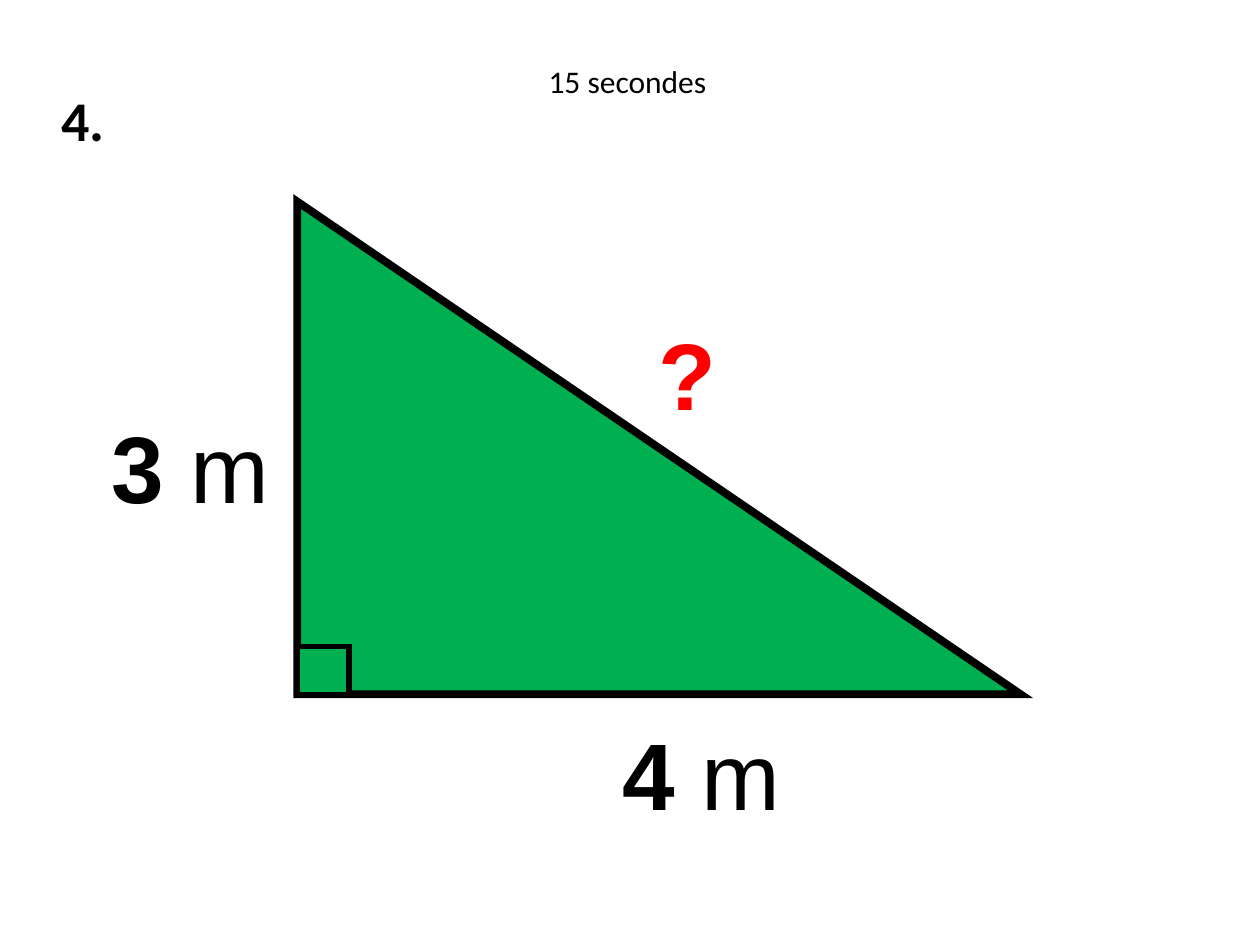
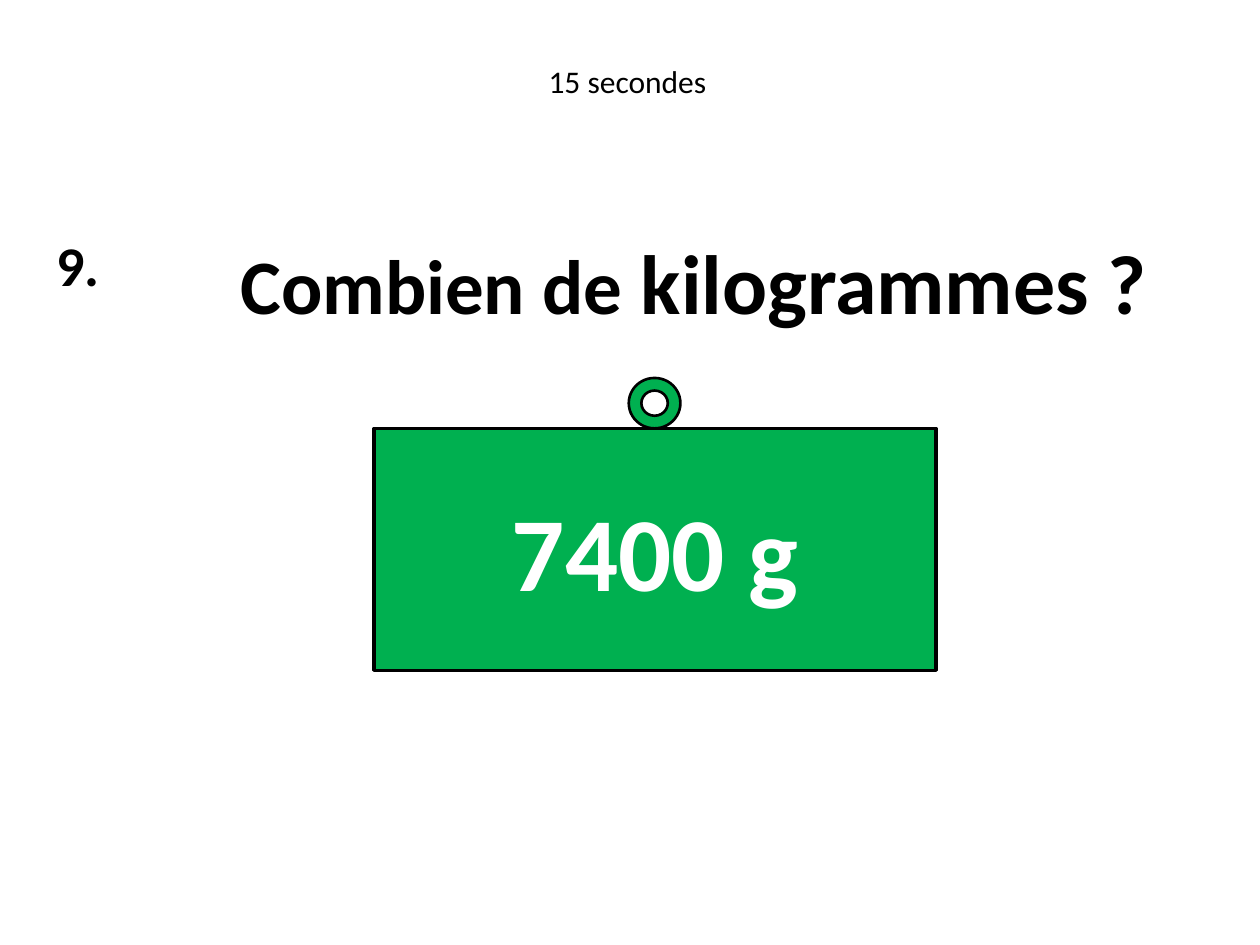
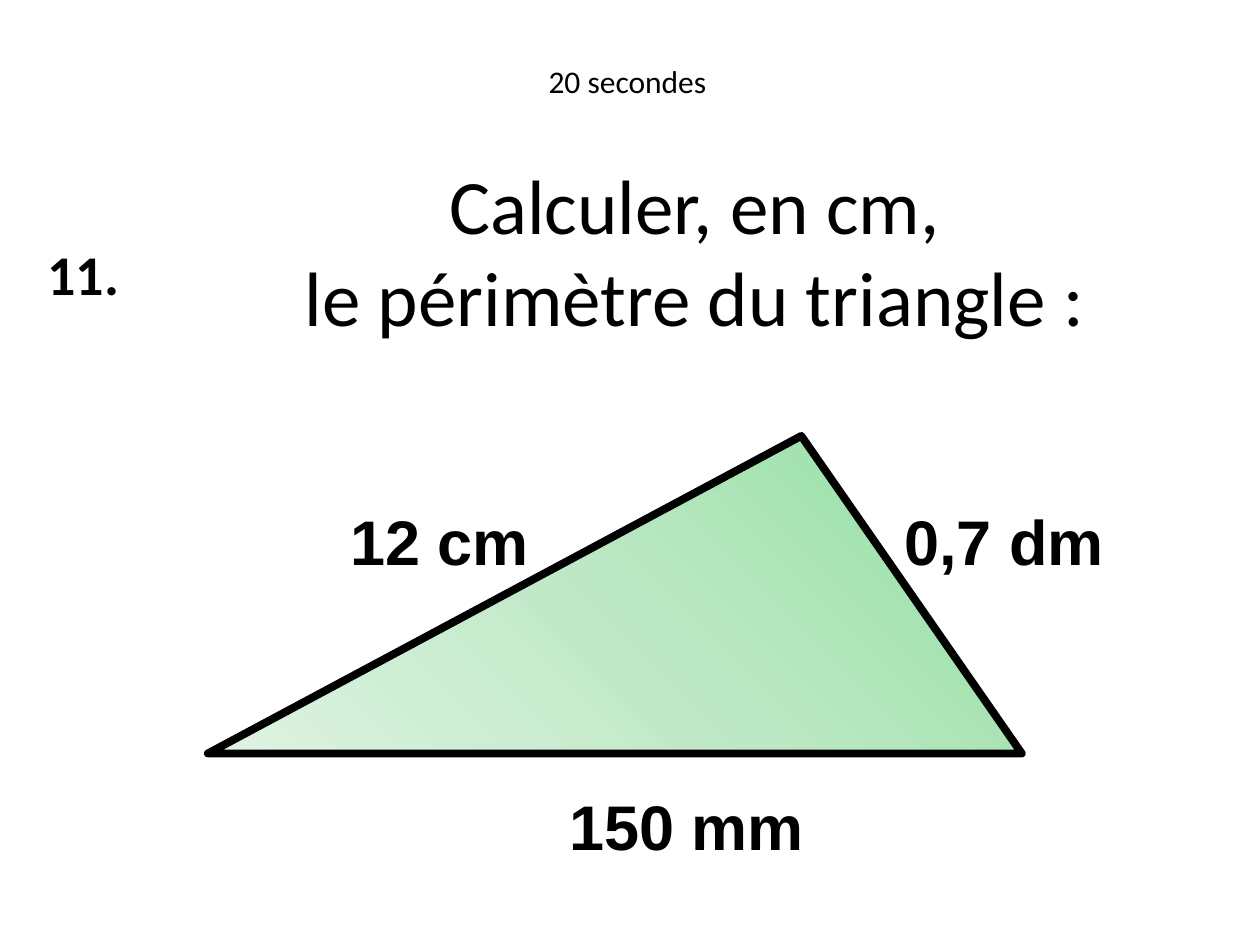
from copy import deepcopy

from pptx import Presentation
from pptx.dml.color import RGBColor
from pptx.enum.shapes import MSO_SHAPE
from pptx.enum.text import MSO_ANCHOR, MSO_AUTO_SIZE, PP_ALIGN
from pptx.oxml.ns import qn
from pptx.util import Pt
from lxml.etree import SubElement

PX = 9144
BLACK, WHITE, RED, GREEN = "000000", "FFFFFF", "FF0000", "00B050"
hue = RGBColor.from_string


def add_text(slide, box, text, size, font="Calibri", bold=False, color=BLACK,
             align=PP_ALIGN.LEFT, wrap=True):
    left, top, width, height = box
    if wrap:
        outline = slide.shapes.build_freeform(left, top, scale=PX)
        right, bottom = left + width, top + height
        outline.add_line_segments([(right, top), (right, bottom), (left, bottom)], close=True)
        holder = outline.convert_to_shape()
        holder.shadow.inherit = False
        holder.fill.background()
        holder.line.fill.background()
    else:
        holder = slide.shapes.add_textbox(left * PX, top * PX, width * PX, height * PX)
    frame = holder.text_frame
    frame.word_wrap = wrap
    frame.auto_size = MSO_AUTO_SIZE.SHAPE_TO_FIT_TEXT
    frame.vertical_anchor = MSO_ANCHOR.TOP
    frame.text = text
    for paragraph in frame.paragraphs:
        paragraph.alignment = align
        for run in paragraph.runs:
            run.font.name = font
            run.font.size = Pt(size)
            run.font.bold = bold
            run.font.color.rgb = hue(color)
    return frame.paragraphs[0]


def paint(shape, width, join):
    shape.shadow.inherit = False
    shape.fill.solid()
    shape.fill.fore_color.rgb = hue(GREEN)
    shape.line.color.rgb = hue(BLACK)
    shape.line.width = Pt(width)
    SubElement(shape.line._get_or_add_ln(), qn(join))


deck = Presentation()
deck.slide_width = 1000 * PX
deck.slide_height = 750 * PX

questions = []
for number, box, seconds in [
    ("4.", (39, 63, 79, 63), 15),
    ("9.", (35, 178, 79, 63), 15),
    ("11.", (28, 185, 94, 63), 20),
]:
    slide = deck.slides.add_slide(deck.slide_layouts[6])
    add_text(slide, box, number, 32, bold=True)
    add_text(slide, (350, 44, 296, 40), f"{seconds} secondes", 18, align=PP_ALIGN.CENTER)
    questions.append(slide)
hypotenuse, mass, perimeter = questions

outline = hypotenuse.shapes.build_freeform(236, 160, scale=PX)
outline.add_line_segments([(810, 551), (236, 551)], close=True)
paint(outline.convert_to_shape(), 4.5, "a:miter")
right_angle = hypotenuse.shapes.add_shape(
    MSO_SHAPE.RECTANGLE, 236 * PX, 513 * PX, 41 * PX, 38 * PX)
paint(right_angle, 3, "a:miter")

for length, left, top in [("4 ", 484, 563), ("3 ", 79, 320)]:
    side = add_text(hypotenuse, (left, top, 150, 97), length, 54, "Arial", True, wrap=False)
    unit = side.add_run()
    unit.text = "m"
    unit.font.name = "Arial"
    unit.font.size = Pt(54)
    unit.font.color.rgb = hue(BLACK)
add_text(hypotenuse, (513, 246, 66, 97), "?", 54, "Arial", True, RED, wrap=False)

prompt = add_text(mass, (181, 178, 858, 92), "Combien de ", 44, bold=True)
target_unit = prompt.add_run()
target_unit.text = "kilogrammes ?"
target_unit.font.name = "Calibri"
target_unit.font.size = Pt(48)
target_unit.font.bold = True
target_unit.font.color.rgb = hue(BLACK)

weight = mass.shapes.add_shape(
    MSO_SHAPE.RECTANGLE, 297 * PX, 340 * PX, 446 * PX, 192 * PX)
paint(weight, 2, "a:round")
weight.text_frame.text = "7400 g"
weight.text_frame.vertical_anchor = MSO_ANCHOR.MIDDLE
grams = weight.text_frame.paragraphs[0]
grams.alignment = PP_ALIGN.CENTER
grams.runs[0].font.name = "Calibri"
grams.runs[0].font.size = Pt(60)
grams.runs[0].font.bold = True
grams.runs[0].font.color.rgb = hue(WHITE)
ring = mass.shapes.add_shape(MSO_SHAPE.DONUT, 499 * PX, 300 * PX, 41 * PX, 40 * PX)
paint(ring, 1.5, "a:round")

add_text(perimeter, (130, 120, 843, 161), "Calculer, en cm,\nle périmètre du triangle :",
         44, align=PP_ALIGN.CENTER)
outline = perimeter.shapes.build_freeform(636, 346, scale=PX)
outline.add_line_segments([(811, 598), (165, 598)], close=True)
triangle = outline.convert_to_shape()
paint(triangle, 4.5, "a:round")
triangle.fill.gradient()
triangle.fill.gradient_angle = 225
stop_list = triangle.element.spPr.find(".//" + qn("a:gsLst"))
stop_list.append(deepcopy(stop_list[0]))
shades = [(0, "91DEA0"), (0.5, "BDE8C5"), (1, "DFF3E3")]
for stop, (position, shade) in zip(triangle.fill.gradient_stops, shades):
    stop.position = position
    stop.color.rgb = hue(shade)

for length, box in [
    ("12 cm", (268, 394, 163, 68)),
    ("150 mm", (442, 620, 208, 68)),
    ("0,7 dm", (708, 394, 180, 68)),
]:
    add_text(perimeter, box, length, 36, "Arial", True, wrap=False)

deck.save("out.pptx")
